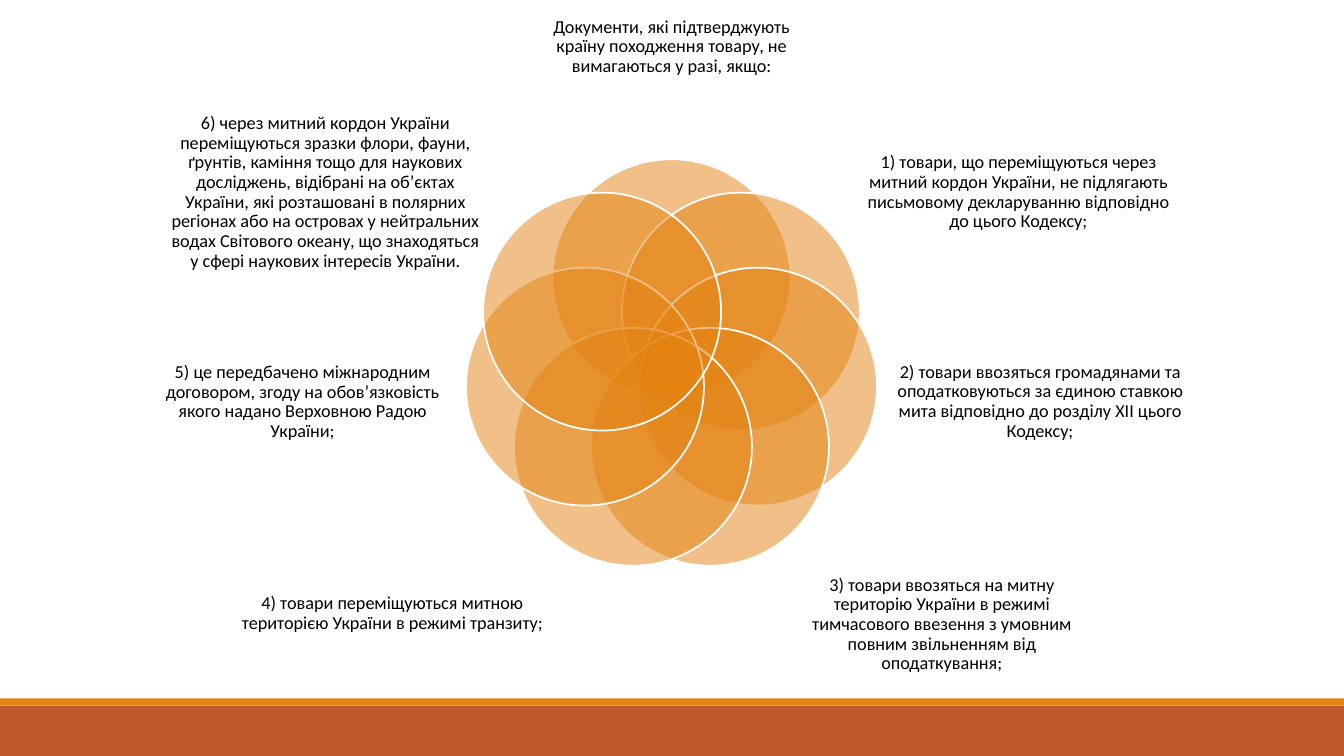
from math import cos, pi, sin

from lxml.etree import SubElement
from pptx import Presentation
from pptx.dml.color import RGBColor
from pptx.enum.shapes import MSO_SHAPE as SHAPE
from pptx.enum.text import MSO_ANCHOR as ANCHOR, MSO_AUTO_SIZE as AUTO, PP_ALIGN as ALIGN
from pptx.oxml.ns import qn
from pptx.util import Inches, Pt

COLORS = {"orange": "E48312", "rust": "BD582C", "white": "FFFFFF", "black": "000000"}
FONT = "Calibri"
HEADING = "Документи, які підтверджують країну походження товару, не вимагаються у разі, якщо:"
CASES = [
    ((8.53, 0.91, 3.14, 2),
     "1) товари, що переміщуються через митний кордон України, не підлягають "
     "письмовому декларуванню відповідно до цього Кодексу;"),
    ((8.89, 2.92, 2.85, 2.13),
     "2) товари ввозяться громадянами та оподатковуються за єдиною ставкою "
     "мита відповідно до розділу XII цього Кодексу;"),
    ((7.9, 5.17, 2.88, 2.05),
     "3) товари ввозяться на митну територію України в режимі тимчасового "
     "ввезення з умовним повним звільненням від оподаткування;"),
    ((2.26, 5.21, 3.26, 1.75),
     "4) товари переміщуються митною територією України в режимі транзиту;"),
    ((1.57, 2.98, 2.86, 2.02),
     "5) це передбачено міжнародним договором, згоду на обов’язковість якого "
     "надано Верховною Радою України;"),
    ((1.67, 1.02, 3.11, 1.78),
     "6) через митний кордон України переміщуються зразки флори, фауни, ґрунтів, "
     "каміння тощо для наукових досліджень, відібрані на об’єктах України, які "
     "розташовані в полярних регіонах або на островах у нейтральних водах Світового "
     "океану, що знаходяться у сфері наукових інтересів України."),
]


def rgb(name):
    return RGBColor.from_string(COLORS[name])


def add_filled(s, kind, box, color):
    sp = s.shapes.add_shape(kind, *map(Inches, box))
    sp.shadow.inherit = False
    sp.fill.solid()
    sp.fill.fore_color.rgb = rgb(color)
    sp.line.fill.background()
    return sp


def write_label(sp, text):
    tf = sp.text_frame
    tf.text = text
    tf.word_wrap = True
    tf.auto_size = AUTO.NONE
    tf.vertical_anchor = ANCHOR.MIDDLE
    tf.margin_left = tf.margin_right = tf.margin_top = tf.margin_bottom = 0
    p = tf.paragraphs[0]
    p.alignment = ALIGN.CENTER
    p.line_spacing = 0.9
    font = p.runs[0].font
    font.name = FONT
    font.size = Pt(13)
    font.color.rgb = rgb("black")


def add_footer(s, box):
    x, y, w, h = box
    stripe = 0.07
    add_filled(s, SHAPE.RECTANGLE, (x, y + stripe, w, h - stripe), "rust")
    add_filled(s, SHAPE.RECTANGLE, (x, y, w, stripe), "orange")


def add_heading(s, box):
    title = s.shapes.title
    title.left, title.top, title.width, title.height = map(Inches, box)
    write_label(title, HEADING)


def add_petals(s, box, count, size):
    x, y, w, h = box
    orbit = (w - size) / 2
    for i in range(count):
        angle = 2 * pi * i / count
        left = x + orbit * (1 + sin(angle))
        top = y + orbit * (1 - cos(angle))
        petal = add_filled(s, SHAPE.OVAL, (left, top, size, size), "orange")
        fill_color = petal.fill._xPr.find(qn("a:solidFill"))[0]
        SubElement(fill_color, qn("a:alpha"), val="50000")
        petal.line.color.rgb = rgb("white")
        petal.line.width = Pt(1.25)


def add_cases(s):
    for box, text in CASES:
        write_label(s.shapes.add_textbox(*map(Inches, box)), text)


def main():
    prs = Presentation()
    prs.slide_width = Inches(13.33)
    prs.slide_height = Inches(7.5)
    s = prs.slides.add_slide(prs.slide_layouts[5])
    add_footer(s, (0, 6.93, 13.33, 0.57))
    add_heading(s, (5.31, 0, 2.7, 0.93))
    add_petals(s, (4.6, 1.58, 4.12, 4.12), len(CASES) + 1, 2.36)
    add_cases(s)
    prs.save("out.pptx")


if __name__ == "__main__":
    main()
